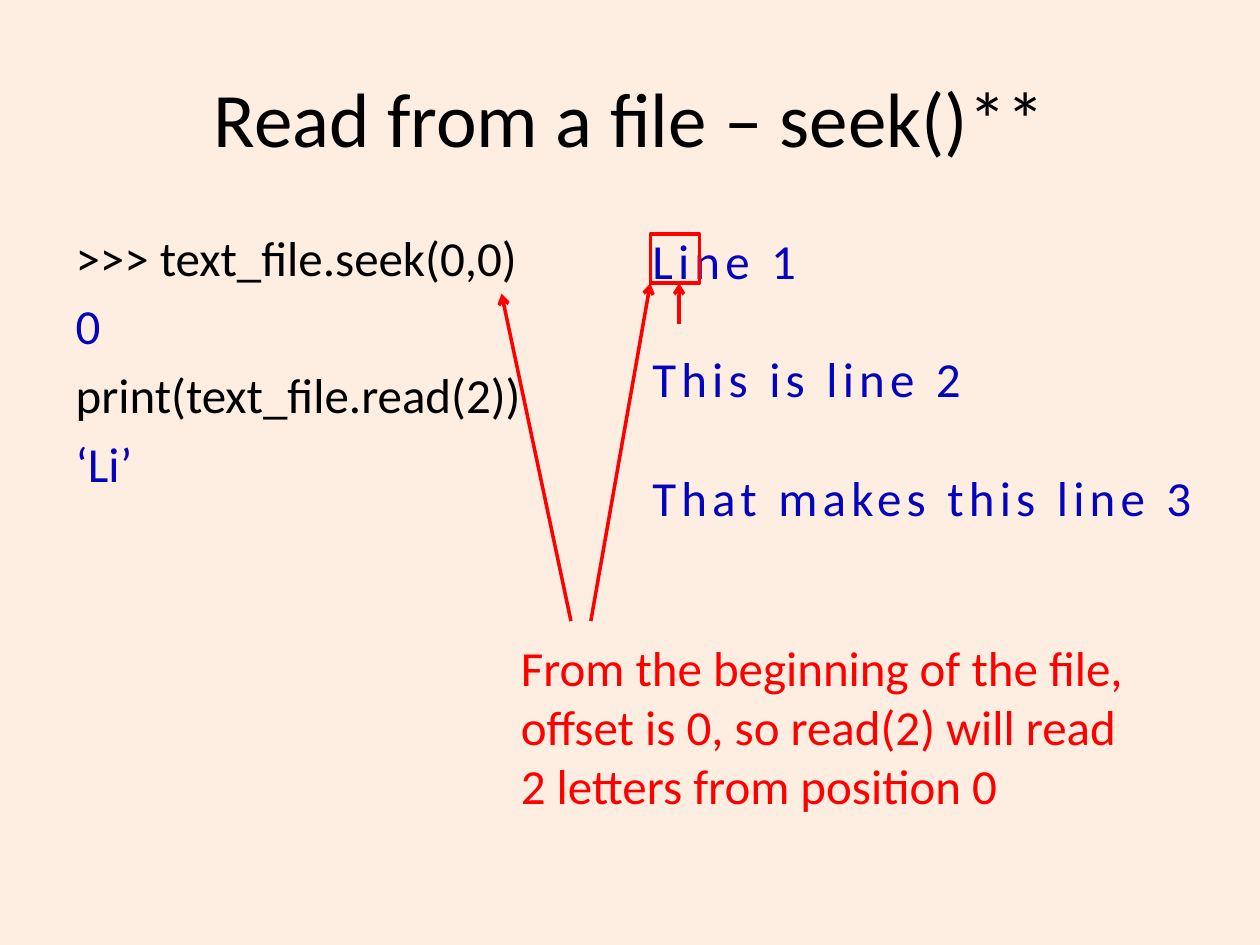
from dataclasses import dataclass

from lxml.etree import SubElement
from pptx import Presentation
from pptx.dml.color import RGBColor
from pptx.enum.shapes import MSO_CONNECTOR, MSO_SHAPE
from pptx.enum.text import MSO_ANCHOR, PP_ALIGN
from pptx.oxml.ns import qn
from pptx.util import Cm, Pt


@dataclass(frozen=True)
class Theme:
    font: str = "Calibri"
    title_size: int = 44
    text_size: int = 28
    line_width: int = 2
    background: str = "FEEEE1"
    code: str = "000000"
    output: str = "0404BC"
    accent: str = "FF0000"


THEME = Theme()

TITLE = "Read from a file – seek()**"
SESSION = [
    (">>> text_file.seek(0,0)", THEME.code),
    ("0", THEME.output),
    ("print(text_file.read(2))", THEME.code),
    ("‘Li’", THEME.output),
]
FILE_LINES = ["Line 1", "This is line 2", "That makes this line 3"]
NOTE = "From the beginning of the file, offset is 0, so read(2) will read 2 letters from position 0"

# Left, top, width, height in centimetres
TITLE_AREA = (1.27, 0.76, 22.86, 3.18)
SESSION_AREA = (1.27, 4.45, 22.86, 13.69)
FILE_AREA = (12.9, 4.52, 13.21, 7.39)
NOTE_AREA = (9.3, 12.73, 13.79, 4.8)
LETTERS_AREA = (13.11, 4.72, 0.99, 0.99)

letters_left, letters_top, _, letters_height = LETTERS_AREA
LETTERS_BOTTOM = letters_top + letters_height
NOTE_ARROW_TOP = 12.52
# Start and end points in centimetres
ARROWS = [
    ((13.69, 6.53), (13.69, LETTERS_BOTTOM)),
    ((11.51, NOTE_ARROW_TOP), (10.11, 5.92)),
    ((11.91, NOTE_ARROW_TOP), (letters_left, LETTERS_BOTTOM)),
]


def lengths(values):
    return [Cm(value) for value in values]


def place(shape, area):
    shape.left, shape.top, shape.width, shape.height = lengths(area)


def write(para, text, *, color, size=THEME.text_size, tracking=0):
    """Add one run; tracking is the letter spacing in points."""
    span = para.add_run()
    span.text = text
    span.font.name = THEME.font
    span.font.size = Pt(size)
    span.font.color.rgb = RGBColor.from_string(color)
    if tracking:
        span.font._element.set("spc", str(tracking * 100))


def paragraphs(frame, count):
    """Yield the frame's first paragraph, then new ones up to count."""
    yield frame.paragraphs[0]
    for _ in range(count - 1):
        yield frame.add_paragraph()


def add_text_frame(page, area):
    frame = page.shapes.add_textbox(*lengths(area)).text_frame
    frame.word_wrap = True
    return frame


def style_line(line):
    line.color.rgb = RGBColor.from_string(THEME.accent)
    line.width = Pt(THEME.line_width)


def add_arrow(page, start, end):
    arrow = page.shapes.add_connector(MSO_CONNECTOR.STRAIGHT, *lengths(start + end))
    style_line(arrow.line)
    SubElement(arrow.line._get_or_add_ln(), qn("a:tailEnd"), type="arrow")
    SubElement(arrow._element.spPr, qn("a:effectLst"))


def add_title(page):
    title = page.shapes.title
    place(title, TITLE_AREA)
    title.text_frame.vertical_anchor = MSO_ANCHOR.MIDDLE
    para = title.text_frame.paragraphs[0]
    para.alignment = PP_ALIGN.CENTER
    write(para, TITLE, color=THEME.code, size=THEME.title_size)


def add_session(page):
    body = page.placeholders[1]
    place(body, SESSION_AREA)
    for para, (text, color) in zip(paragraphs(body.text_frame, len(SESSION)), SESSION):
        SubElement(para._p.get_or_add_pPr(), qn("a:buNone"))
        write(para, text, color=color)


def add_file_lines(page):
    frame = add_text_frame(page, FILE_AREA)
    for index, para in enumerate(paragraphs(frame, len(FILE_LINES))):
        if index:
            para.space_before = Pt(34)
        write(para, FILE_LINES[index], color=THEME.output, tracking=3)


def add_letters_frame(page):
    box = page.shapes.add_shape(MSO_SHAPE.RECTANGLE, *lengths(LETTERS_AREA))
    box.shadow.inherit = False
    box.fill.background()
    style_line(box.line)


def add_note(page):
    para = add_text_frame(page, NOTE_AREA).paragraphs[0]
    para._p.get_or_add_pPr().set("marL", str(Cm(0.95)))
    write(para, NOTE, color=THEME.accent)


def main():
    deck = Presentation()
    deck.slide_width, deck.slide_height = Cm(25.4), Cm(19.05)
    page = deck.slides.add_slide(deck.slide_layouts[1])
    page.background.fill.solid()
    page.background.fill.fore_color.rgb = RGBColor.from_string(THEME.background)
    add_title(page)
    add_session(page)
    add_file_lines(page)
    add_letters_frame(page)
    add_note(page)
    for start, end in ARROWS:
        add_arrow(page, start, end)
    deck.save("out.pptx")


if __name__ == "__main__":
    main()
